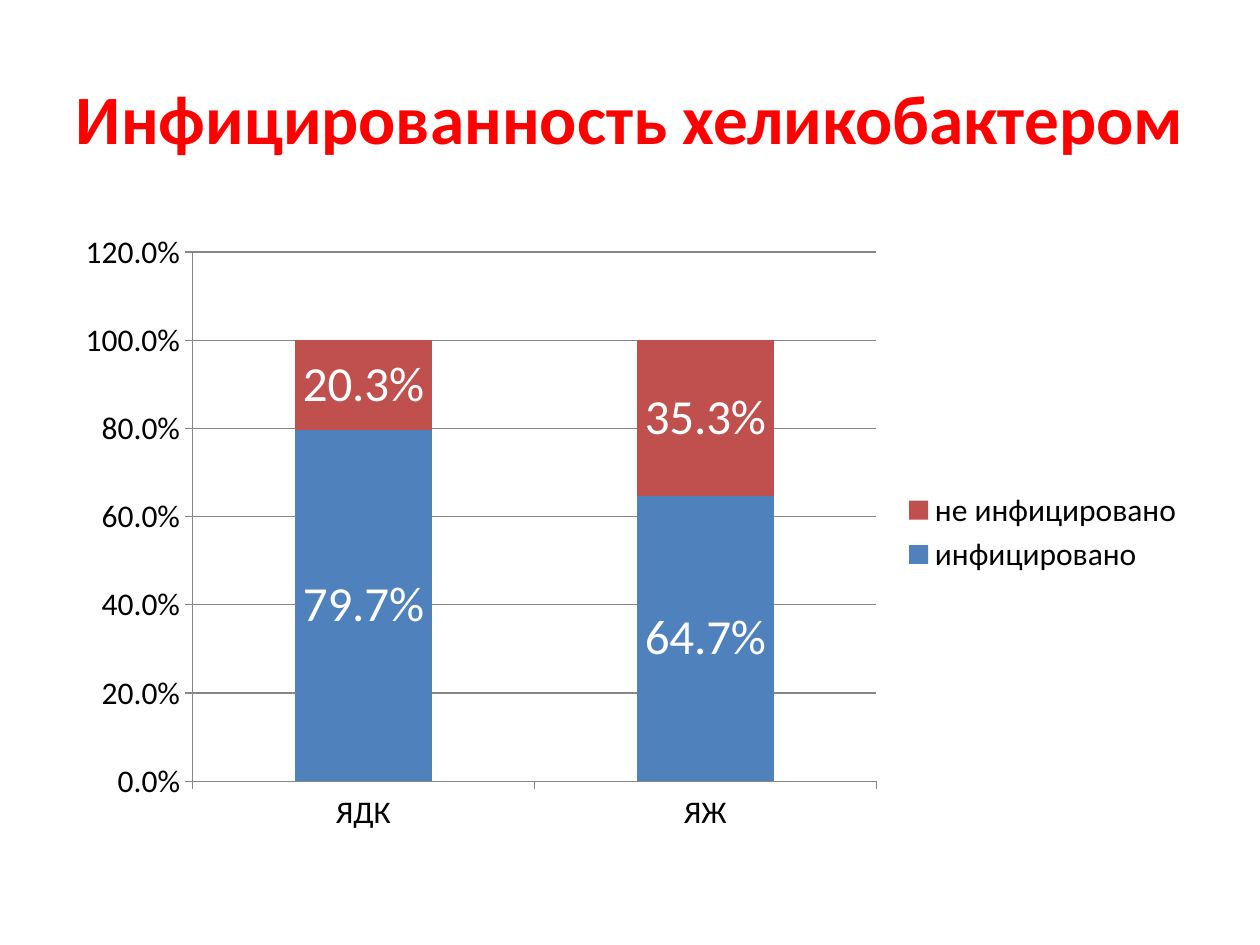
from pptx import Presentation
from pptx.chart.data import CategoryChartData
from pptx.dml.color import RGBColor
from pptx.enum.chart import (XL_CHART_TYPE, XL_LABEL_POSITION,
                             XL_LEGEND_POSITION, XL_TICK_MARK)
from pptx.enum.text import MSO_ANCHOR, PP_ALIGN
from pptx.util import Inches, Pt

FONT = "Calibri"
PERCENT = "0.0%"
COLORS = {
    "title": "FF0000",
    "text": "000000",
    "label": "FFFFFF",
    "line": "868686",
    "инфицировано": "4F81BD",
    "не инфицировано": "C0504D",
}
GROUPS = ["ЯДК", "ЯЖ"]
SHARES = {
    "инфицировано": (0.797, 0.647),
    "не инфицировано": (0.203, 0.353),
}


def color(name):
    return RGBColor.from_string(COLORS[name])


def style(font, size, name, bold=False):
    font.name = FONT
    font.size = Pt(size)
    font.bold = bold
    font.color.rgb = color(name)


def set_title(slide, text):
    title = slide.shapes.title
    title.left, title.top = Inches(0.5), Inches(0.3)
    title.width, title.height = Inches(9), Inches(1.25)
    frame = title.text_frame
    frame.text = text
    frame.word_wrap = True
    frame.vertical_anchor = MSO_ANCHOR.MIDDLE
    par = frame.paragraphs[0]
    par.alignment = PP_ALIGN.CENTER
    style(par.runs[0].font, 39.6, "title", bold=True)


def set_axis(axis):
    axis.major_tick_mark = XL_TICK_MARK.OUTSIDE
    axis.minor_tick_mark = XL_TICK_MARK.NONE
    axis.format.line.color.rgb = color("line")
    axis.format.line.width = Pt(0.75)


def set_series(series):
    series.format.fill.solid()
    series.format.fill.fore_color.rgb = color(series.name)
    series.invert_if_negative = False
    labels = series.data_labels
    labels.show_value = True
    labels.number_format = PERCENT
    labels.number_format_is_linked = False
    labels.position = XL_LABEL_POSITION.CENTER
    style(labels.font, 28, "label")


def add_stack(slide):
    data = CategoryChartData(number_format=PERCENT)
    data.categories = GROUPS
    for name, values in SHARES.items():
        data.add_series(name, values)
    chart = slide.shapes.add_chart(
        XL_CHART_TYPE.COLUMN_STACKED, Inches(0.5), Inches(1.75),
        Inches(9), Inches(4.95), data).chart
    chart.has_title = False
    style(chart.font, 18, "text")

    # Axes and gridlines
    set_axis(chart.category_axis)
    scale = chart.value_axis
    set_axis(scale)
    scale.minimum_scale, scale.maximum_scale = 0, 1.2
    scale.major_unit = 0.2
    scale.tick_labels.number_format = PERCENT
    scale.tick_labels.number_format_is_linked = False
    scale.has_major_gridlines = True
    grid = scale.major_gridlines.format.line
    grid.color.rgb = color("line")
    grid.width = Pt(0.75)

    # Columns
    plot = chart.plots[0]
    plot.gap_width = 150
    plot.overlap = 100
    plot.vary_by_categories = False
    for series in plot.series:
        set_series(series)

    # Legend
    chart.has_legend = True
    chart.legend.position = XL_LEGEND_POSITION.RIGHT
    chart.legend.include_in_layout = False


def main():
    deck = Presentation()
    deck.slide_width, deck.slide_height = Inches(10), Inches(7.5)
    slide = deck.slides.add_slide(deck.slide_layouts[5])
    set_title(slide, "Инфицированность хеликобактером ")
    add_stack(slide)
    deck.save("out.pptx")


if __name__ == "__main__":
    main()
